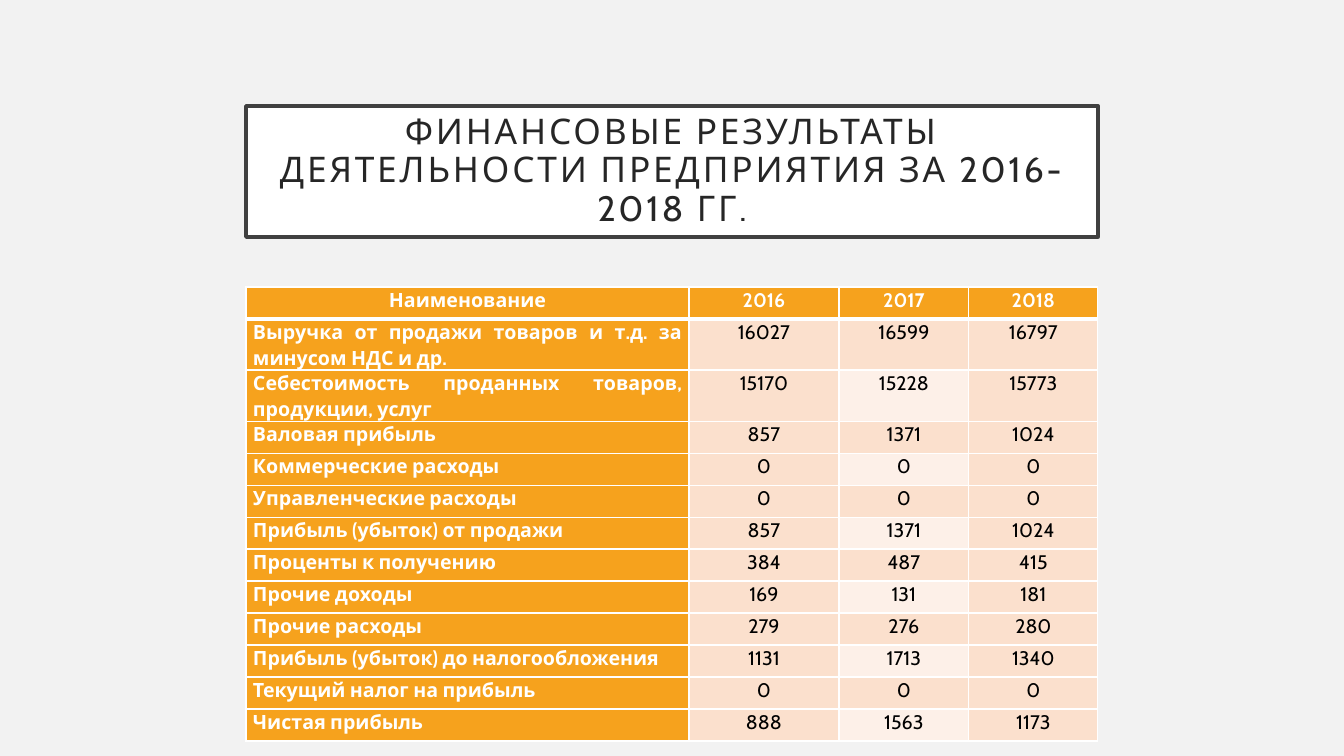
from lxml.etree import SubElement
from pptx import Presentation
from pptx.dml.color import RGBColor
from pptx.enum.shapes import MSO_SHAPE
from pptx.enum.text import MSO_ANCHOR, PP_ALIGN
from pptx.oxml.ns import qn
from pptx.util import Emu, Pt

FONT = "Cabin"
WHITE = "FFFFFF"
ORANGE = "F6A21D"
PEACH = "FBE0CD"
PALE_PEACH = "FDF0E8"
COLUMN_WIDTHS = [443, 150, 130, 129]
ROW_HEIGHT = 32
TITLE = "ФИНАНСОВЫЕ РЕЗУЛЬТАТЫ ДЕЯТЕЛЬНОСТИ ПРЕДПРИЯТИЯ ЗА 2016-2018 ГГ."
RESULTS = [
    ("Наименование", 2016, 2017, 2018),
    ("Выручка от продажи товаров и т.д. за минусом НДС и др.", 16027, 16599, 16797),
    ("Себестоимость проданных товаров, продукции, услуг", 15170, 15228, 15773),
    ("Валовая прибыль", 857, 1371, 1024),
    ("Коммерческие расходы", 0, 0, 0),
    ("Управленческие расходы", 0, 0, 0),
    ("Прибыль (убыток) от продажи", 857, 1371, 1024),
    ("Проценты к получению", 384, 487, 415),
    ("Прочие доходы", 169, 131, 181),
    ("Прочие расходы", 279, 276, 280),
    ("Прибыль (убыток) до налогообложения", 1131, 1713, 1340),
    ("Текущий налог на прибыль", 0, 0, 0),
    ("Чистая прибыль", 888, 1563, 1173),
]


def px(length):
    """Turn slide pixels into EMU."""
    return Emu(round(length * 914400 / 100.8))


def color(value):
    """Turn a hex string into a colour."""
    return RGBColor.from_string(value)


def paint(target, value):
    """Give a shape, cell or background a solid fill."""
    target.fill.solid()
    target.fill.fore_color.rgb = color(value)


def style_text(para, size, value, bold, align, spacing):
    """Format a paragraph and its run."""
    para.alignment = align
    para.line_spacing = spacing
    span = para.runs[0]
    span.font.name = FONT
    span.font.size = Pt(size)
    span.font.bold = bold
    span.font.color.rgb = color(value)
    return span


def set_borders(cell, top, bottom):
    """Draw white cell borders, with the given top and bottom widths in points."""
    properties = cell._tc.get_or_add_tcPr()
    for side, width in (("L", 1), ("R", 1), ("T", top), ("B", bottom)):
        line = SubElement(properties, qn(f"a:ln{side}"), w=str(Pt(width)))
        fill = SubElement(line, qn("a:solidFill"))
        SubElement(fill, qn("a:srgbClr"), val=WHITE)


def add_title(page, left, top, width, height):
    """Place the framed title."""
    box = page.shapes.add_shape(
        MSO_SHAPE.RECTANGLE, px(left), px(top), px(width), px(height))
    box.shadow.inherit = False
    paint(box, WHITE)
    box.line.color.rgb = color("404040")
    box.line.width = Pt(2.5)
    frame = box.text_frame
    frame.word_wrap = True
    frame.vertical_anchor = MSO_ANCHOR.MIDDLE
    frame.margin_left = frame.margin_right = px(20)
    frame.margin_top = frame.margin_bottom = px(20)
    frame.text = TITLE
    span = style_text(frame.paragraphs[0], 25.2, "262626", False, PP_ALIGN.CENTER, 0.9)
    span.font._element.set("spc", "200")


def fill_cell(cell, value, row, column):
    """Write and style one table cell according to its place."""
    heading = row == 0 or column == 0
    cell.margin_left = cell.margin_right = px(7)
    cell.margin_top = cell.margin_bottom = 0
    set_borders(cell, 3 if row == 1 else 1, 3 if row == 0 else 1)
    if heading:
        paint(cell, ORANGE)
    else:
        paint(cell, PALE_PEACH if column == 2 and row % 2 == 0 else PEACH)
    cell.text_frame.text = str(value)
    align = PP_ALIGN.JUSTIFY if column == 0 and row > 0 else PP_ALIGN.CENTER
    style_text(cell.text_frame.paragraphs[0], 14,
               WHITE if heading else "000000", heading, align, 1.07)


def add_results(page, left, top, width):
    """Place the table of financial results."""
    table = page.shapes.add_table(
        len(RESULTS), len(COLUMN_WIDTHS), px(left), px(top),
        px(width), px(ROW_HEIGHT * len(RESULTS))).table
    for column, column_width in zip(table.columns, COLUMN_WIDTHS):
        column.width = px(column_width)
    for row, values in enumerate(RESULTS):
        table.rows[row].height = px(ROW_HEIGHT)
        for column, value in enumerate(values):
            fill_cell(table.cell(row, column), value, row, column)


def main():
    """Build and save the deck."""
    deck = Presentation()
    deck.slide_width, deck.slide_height = px(1344), px(756)
    page = deck.slides.add_slide(deck.slide_layouts[6])
    paint(page.background, "F2F2F2")
    add_title(page, 246, 106, 852, 131)
    add_results(page, 246, 287, sum(COLUMN_WIDTHS))
    deck.save("out.pptx")


if __name__ == "__main__":
    main()
